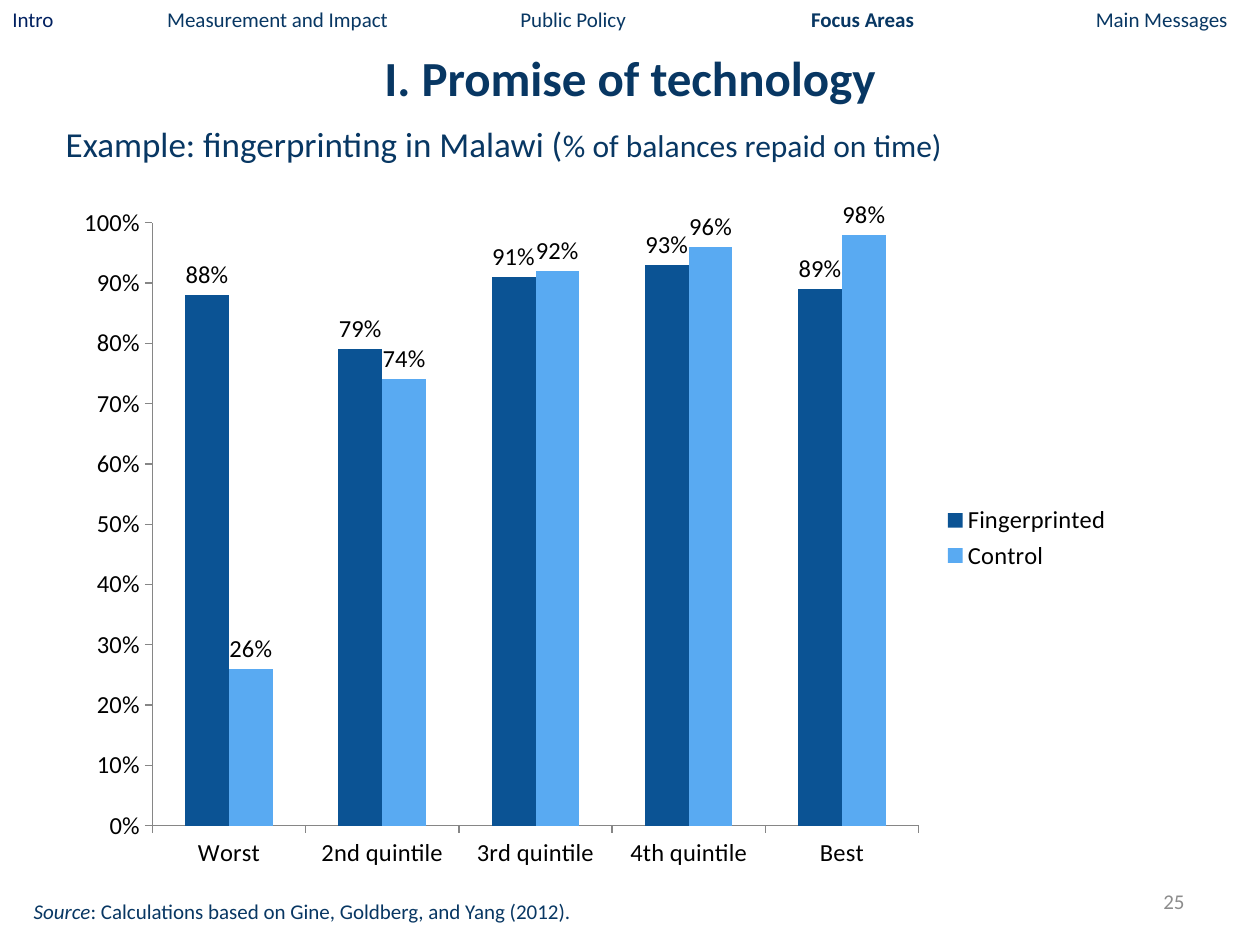
import pptx
import pptx.chart.data
import pptx.dml.color
import pptx.enum.chart
import pptx.enum.text
import pptx.util
from dataclasses import dataclass
from lxml import etree
from pptx.oxml.ns import qn

Cm, Pt = pptx.util.Cm, pptx.util.Pt
Align, Anchor = pptx.enum.text.PP_ALIGN, pptx.enum.text.MSO_ANCHOR


@dataclass(frozen=True)
class Theme:
    font: str = "Calibri"
    ink: str = "083763"
    navy: str = "002060"
    grey: str = "8C8C8C"
    black: str = "000000"
    axis: str = "868686"
    bars: tuple = ("0B5394", "59AAF2")
    title: int = 28
    lead: int = 20
    detail: int = 18
    chart: int = 14
    small: int = 12


class SlideBuilder:
    def __init__(self, slide, theme):
        self.slide = slide
        self.theme = theme

    def style(self, font, size=None, color=None):
        font.name = self.theme.font
        if size:
            font.size = Pt(size)
        if color:
            font.color.rgb = pptx.dml.color.RGBColor.from_string(color)

    def place(self, shape, left, top, width, height):
        shape.left, shape.top = Cm(left), Cm(top)
        shape.width, shape.height = Cm(width), Cm(height)

    def title(self, text, *area):
        shape = self.slide.shapes.title
        self.place(shape, *area)
        frame = shape.text_frame
        frame.vertical_anchor = Anchor.MIDDLE
        frame.auto_size = pptx.enum.text.MSO_AUTO_SIZE.NONE
        para = frame.paragraphs[0]
        para.text = text
        para.alignment = Align.CENTER
        self.style(para.font, self.theme.title, self.theme.ink)
        para.font.bold = True

    def body(self, pieces, *area):
        """Fill the body placeholder with one unbulleted line of (text, size)."""
        shape = self.slide.placeholders[1]
        self.place(shape, *area)
        frame = shape.text_frame
        frame.auto_size = pptx.enum.text.MSO_AUTO_SIZE.NONE
        para = frame.paragraphs[0]
        properties = para._p.get_or_add_pPr()
        properties.set("marL", "0")
        properties.set("indent", "0")
        etree.SubElement(properties, qn("a:buNone"))
        self.style(para.font, color=self.theme.ink)
        for text, size in pieces:
            span = para.add_run()
            span.text = text
            span.font.size = Pt(size)

    def text(self, *area, color=None, align=Align.LEFT, anchor=Anchor.MIDDLE):
        """Add a small-type text box and return its paragraph."""
        box = self.slide.shapes.add_textbox(*map(Cm, area))
        frame = box.text_frame
        frame.word_wrap = True
        frame.vertical_anchor = anchor
        para = frame.paragraphs[0]
        para.alignment = align
        self.style(para.font, self.theme.small, color)
        return para

    def navigation(self, sections, current, *area):
        """Lay out (name, tab position, colour) sections on one tabbed line."""
        para = self.text(*area, anchor=Anchor.TOP)
        tabs = etree.Element(qn("a:tabLst"))
        for index, (name, position, color) in enumerate(sections):
            if index:
                etree.SubElement(tabs, qn("a:tab"), pos=str(Cm(position)), algn="l")
            span = para.add_run()
            span.text = "\t" + name if index else name
            span.font.bold = name == current
            self.style(span.font, color=color)
        para._p.get_or_add_pPr().insert(0, tabs)

    def columns(self, categories, series, *area):
        data = pptx.chart.data.CategoryChartData(number_format="0%")
        data.categories = categories
        for name, values in series.items():
            data.add_series(name, values)
        kinds = pptx.enum.chart
        chart = self.slide.shapes.add_chart(
            kinds.XL_CHART_TYPE.COLUMN_CLUSTERED, *map(Cm, area), data).chart
        self.style(chart.font, self.theme.chart, self.theme.black)
        chart.has_title = False
        chart.has_legend = True
        chart.legend.position = kinds.XL_LEGEND_POSITION.RIGHT
        chart.legend.include_in_layout = False

        # Axes
        for axis in (chart.category_axis, chart.value_axis):
            axis.has_major_gridlines = False
            axis.major_tick_mark = kinds.XL_TICK_MARK.OUTSIDE
            axis.minor_tick_mark = kinds.XL_TICK_MARK.NONE
            axis.format.line.width = Pt(0.75)
            axis.format.line.color.rgb = pptx.dml.color.RGBColor.from_string(self.theme.axis)
        scale = chart.value_axis
        scale.minimum_scale, scale.maximum_scale, scale.major_unit = 0, 1, 0.1
        scale.tick_labels.number_format = "0%"
        scale.tick_labels.number_format_is_linked = False

        # Bars and their labels
        plot = chart.plots[0]
        plot.gap_width, plot.overlap = 150, 0
        plot.vary_by_categories = False
        for bars, color in zip(plot.series, self.theme.bars):
            bars.format.fill.solid()
            bars.format.fill.fore_color.rgb = pptx.dml.color.RGBColor.from_string(color)
            labels = bars.data_labels
            labels.show_value = True
            labels.number_format = "0%"
            labels.number_format_is_linked = False
            labels.position = kinds.XL_LABEL_POSITION.OUTSIDE_END


def main():
    theme = Theme()
    deck = pptx.Presentation()
    deck.slide_width, deck.slide_height = Cm(25.4), Cm(19.05)
    page = SlideBuilder(deck.slides.add_slide(deck.slide_layouts[1]), theme)

    # Heading
    page.title("I. Promise of technology", 0, 0.76, 25.4, 1.57)
    page.body([("Example: fingerprinting in Malawi (", theme.lead),
               ("% of balances repaid on time)", theme.detail)],
              1.07, 2.34, 23.29, 1.07)

    # Section navigation
    sections = [("Intro", 0, theme.navy),
                ("Measurement and Impact", 3.12, theme.ink),
                ("Public Policy", 10.24, theme.ink),
                ("Focus Areas", 16.1, theme.ink),
                ("Main Messages", 21.84, theme.ink)]
    page.navigation(sections, "Focus Areas", 0, 0, 25.4, 0.76)

    # Repayment chart
    page.columns(["Worst", "2nd quintile", "3rd quintile", "4th quintile", "Best"],
                 {"Fingerprinted": (0.88, 0.79, 0.91, 0.93, 0.89),
                  "Control": (0.26, 0.74, 0.92, 0.96, 0.98)},
                 1.27, 3.91, 21.39, 13.87)

    # Source and page number
    source = page.text(0.43, 17.98, 23.5, 0.76, color=theme.ink)
    for text, italic in (("Source", True),
                         (": Calculations based on Gine, Goldberg, and Yang (2012).", False)):
        span = source.add_run()
        span.text = text
        span.font.italic = italic
    number = page.text(18.21, 17.65, 5.92, 1.02, color=theme.grey, align=Align.RIGHT)
    number.add_run().text = "25"

    deck.save("out.pptx")


if __name__ == "__main__":
    main()
